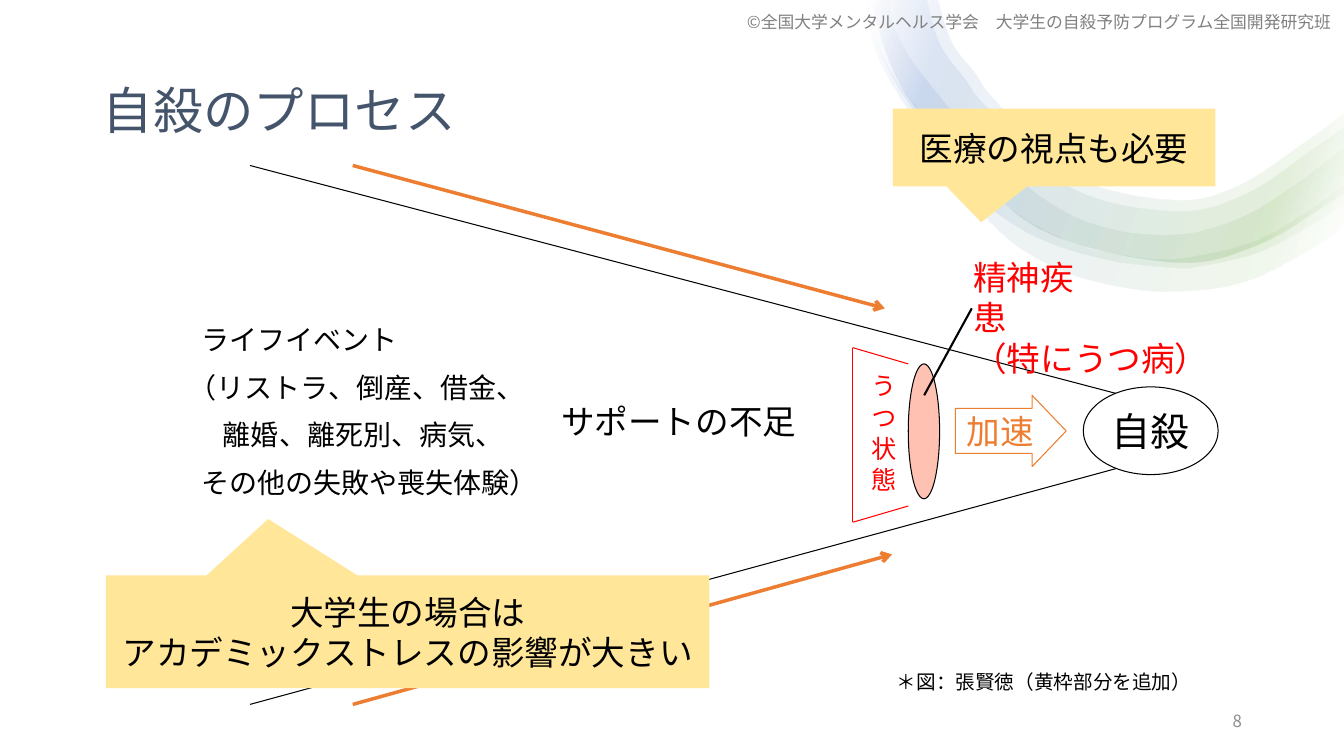
"""Build the slide on the process that leads to suicide."""
from lxml.etree import SubElement
from pptx import Presentation
from pptx.dml.color import RGBColor
from pptx.enum.shapes import MSO_CONNECTOR, MSO_SHAPE
from pptx.enum.text import MSO_ANCHOR, PP_ALIGN
from pptx.oxml import parse_xml
from pptx.oxml.ns import nsdecls, qn
from pptx.util import Cm, Pt

COLORS = {
    "black": "000000", "white": "FFFFFF", "red": "FF0000", "coral": "FF3300",
    "orange": "ED7D31", "yellow": "FFE699", "slate": "44546A", "gray": "808080",
    "pale": "8C8C8C", "green": "70AD47", "blue": "4472C4",
}
FONT = "Noto Sans CJK JP"
STOPS = [(2, "white"), (16, "green"), (85, "blue"), (100, "white")]

OUTER = [(21.97, 0), (22.58, 1.91), (23.72, 3.43), (26.16, 5.74), (29.57, 6.6),
         (31.7, 6.15), (33.5, 5.08), (33.87, 4.83)]
RIBBONS = [
    ([(21.84, 0), (21.92, 0.71), (22.12, 1.42), (22.45, 2.08), (22.83, 2.69),
      (23.44, 3.61), (24.05, 4.55), (24.51, 5.13), (25.63, 6.2), (27.05, 6.93),
      (28.63, 7.29), (29.62, 7.34), (30.78, 7.23), (31.83, 6.91), (33.22, 6.15),
      (33.87, 5.66)],
     [(21.95, 0), (22, 0.69), (22.4, 1.7), (23.01, 2.59), (23.95, 3.73),
      (24.92, 4.8), (26.04, 5.64), (27.33, 6.22), (28.7, 6.48), (29.79, 6.5),
      (31.47, 6.12), (32.72, 5.46), (33.87, 4.65)]),
    ([(21.97, 0), (22.1, 0.97), (22.5, 1.96), (23.27, 3.12), (24.05, 4.29),
      (24.89, 5.18), (26.19, 5.99), (27.89, 6.53), (29.57, 6.73), (30.15, 6.71),
      (31.67, 6.35), (33.02, 5.66), (33.87, 5.11)],
     [(22.43, 0), (22.48, 0.51), (22.89, 1.37), (23.47, 2.16), (24.38, 3.23),
      (25.3, 4.17), (26.29, 4.98), (27.43, 5.59), (28.73, 5.87), (30.05, 5.84),
      (31.27, 5.46), (32.39, 4.8), (33.87, 3.71)]),
    (OUTER,
     [(23.37, 0), (23.7, 1.12), (24.36, 2.03), (24.87, 2.69), (26.95, 4.7),
      (29.57, 5.31), (31.37, 4.88), (33.15, 3.68), (33.87, 3.18)]),
    (OUTER,
     [(23.65, 0), (24, 1.07), (24.59, 1.85), (25.1, 2.54), (27.03, 4.42),
      (29.57, 5.03), (31.22, 4.65), (32.99, 3.48), (33.87, 2.84)]),
]


def tint(name):
    """Return the named colour."""
    return RGBColor.from_string(COLORS[name])


def smooth(knots, steps=6):
    """Return points on a curve that passes through the knots."""
    ends = [knots[0], *knots, knots[-1]]
    curve = [knots[0]]
    for a, b, c, d in zip(ends, ends[1:], ends[2:], ends[3:]):
        for step in range(1, steps + 1):
            t = step / steps
            curve.append(tuple(
                (2 * q + (r - p) * t + (2 * p - 5 * q + 4 * r - s) * t ** 2
                 + (3 * q - p - 3 * r + s) * t ** 3) / 2
                for p, q, r, s in zip(a, b, c, d)))
    return curve


def ribbon(slide, outer, inner):
    """Draw a sheer ribbon between two curved edges."""
    edge = [(Cm(x), Cm(y)) for x, y in smooth(outer) + smooth(inner)[::-1]]
    pen = slide.shapes.build_freeform(*edge[0])
    pen.add_line_segments(edge[1:], close=True)
    shape = pen.convert_to_shape()
    shape.shadow.inherit = False
    shape.line.fill.background()
    stops = "".join(
        f'<a:gs pos="{place * 1000}"><a:srgbClr val="{COLORS[name]}">'
        '<a:alpha val="10000"/></a:srgbClr></a:gs>' for place, name in STOPS)
    blend = parse_xml(
        f'<a:gradFill {nsdecls("a")} rotWithShape="1"><a:gsLst>{stops}</a:gsLst>'
        '<a:lin ang="12000000" scaled="0"/></a:gradFill>')
    shape.element.spPr.find(qn("a:custGeom")).addnext(blend)


def write(shape, text, size=24, color="black", font=FONT, align=PP_ALIGN.LEFT,
          anchor=MSO_ANCHOR.TOP, wrap=True, before=0, leading=None, indents=()):
    """Put formatted text in a shape, one paragraph a line."""
    frame = shape.text_frame
    frame.word_wrap = wrap
    frame.vertical_anchor = anchor
    frame.text = text
    for index, para in enumerate(frame.paragraphs):
        para.alignment = align
        para.line_spacing = leading
        if index:
            para.space_before = Pt(before)
        if indents:
            para._p.get_or_add_pPr().set("marL", str(Cm(indents[index])))
        for run in para.runs:
            run.font.size = Pt(size)
            run.font.name = font
            run.font.color.rgb = tint(color)
            SubElement(run.font._element, qn("a:ea"), typeface=font)


def label(slide, box, text, **style):
    """Add a text box."""
    shape = slide.shapes.add_textbox(*map(Cm, box))
    write(shape, text, **style)
    return shape


def figure(slide, kind, box, fill, line=None, adjust=()):
    """Add a preset shape with a flat fill."""
    shape = slide.shapes.add_shape(kind, *map(Cm, box))
    shape.shadow.inherit = False
    for index, value in enumerate(adjust):
        shape.adjustments[index] = value
    shape.fill.solid()
    shape.fill.fore_color.rgb = tint(fill)
    if line:
        shape.line.color.rgb = tint(line)
        shape.line.width = Pt(0.75)
    else:
        shape.line.fill.background()
    return shape


def callout(slide, box, text, tip):
    """Add a yellow speech box."""
    shape = figure(slide, MSO_SHAPE.RECTANGULAR_CALLOUT, box, "yellow", adjust=tip)
    write(shape, text, align=PP_ALIGN.CENTER, anchor=MSO_ANCHOR.MIDDLE)


def rule(slide, start, end, color="black", width=0.75, arrow=False):
    """Draw a straight line, with an arrowhead if asked."""
    line = slide.shapes.add_connector(
        MSO_CONNECTOR.STRAIGHT, *map(Cm, (*start, *end)))
    line.line.color.rgb = tint(color)
    line.line.width = Pt(width)
    if arrow:
        SubElement(line.line._get_or_add_ln(), qn("a:tailEnd"), type="arrow")
    SubElement(line._element.spPr, qn("a:effectLst"))


def main():
    """Build and save the slide."""
    deck = Presentation()
    deck.slide_width, deck.slide_height = Cm(33.87), Cm(19.05)
    slide = deck.slides.add_slide(deck.slide_layouts[6])
    middle = {"anchor": MSO_ANCHOR.MIDDLE}
    center = {**middle, "align": PP_ALIGN.CENTER, "wrap": False}
    right = {**middle, "align": PP_ALIGN.RIGHT}

    for outer, inner in RIBBONS:
        ribbon(slide, outer, inner)
    label(slide, (15.47, 16.28, 14.81, 1.8), "＊図：張賢徳（黄枠部分を追加）",
          size=14, **right)
    callout(slide, (22.5, 2.74, 8.13, 1.96), "医療の視点も必要", (-0.226, 0.96))
    label(slide, (2.34, 1.02, 29.21, 3.68), "自殺のプロセス",
          size=36, color="slate", leading=0.9, **middle)
    label(slide, (13.89, 9.98, 6.81, 1.27), "サポートの不足")

    rule(slide, (6.3, 4.17), (28.3, 9.96))
    rule(slide, (6.3, 17.75), (28.3, 11.76))
    death = figure(slide, MSO_SHAPE.OVAL, (27.3, 9.75, 3.4, 2.21), "white", "black")
    write(death, "自殺", size=28, font="Arial", **center)
    illness = figure(slide, MSO_SHAPE.OVAL, (22.89, 9.17, 0.79, 3.4), "coral", "black")
    shade = illness.fill._xPr.find(qn("a:solidFill"))[0]
    SubElement(shade, qn("a:alpha"), val="30000")
    speed = figure(slide, MSO_SHAPE.RIGHT_ARROW, (24.08, 9.96, 2.79, 1.8),
                   "white", "orange", (0.632, 0.478))
    write(speed, "加速", color="orange", **center)

    top, bottom = (21.49, 8.76), (21.49, 13.16)
    rule(slide, top, (22.89, 9.17), "red")
    rule(slide, bottom, (22.89, 12.75), "red")
    rule(slide, top, bottom, "red")
    mood = label(slide, (21.49, 9.17, 1.27, 4.8), "う つ 状 態", size=18, color="red")
    mood.text_frame._txBody.bodyPr.set("vert", "eaVert")
    label(slide, (4.5, 8, 9.6, 4.95),
          "ライフイベント\n（リストラ、倒産、借金、\n離婚、離死別、病気、\nその他の失敗や喪失体験）",
          size=20, before=10, indents=(0.32, 0, 0.87, 0.32))

    rule(slide, (8.89, 4.17), (22.3, 7.77), "orange", 2.5, arrow=True)
    rule(slide, (8.89, 17.75), (22.48, 13.97), "orange", 2.5, arrow=True)
    rule(slide, (23.29, 9.96), (24.49, 7.77), width=1.5)
    label(slide, (24.28, 6.35, 6.91, 2.31), "精神疾\v患\v（特にうつ病）", color="red")
    callout(slide, (2.67, 14.5, 15.21, 2.84),
            "大学生の場合は\vアカデミックストレスの影響が大きい", (-0.231, -1))
    label(slide, (23.93, 17.65, 7.62, 1.02), "8", size=12, color="pale", **right)
    label(slide, (18.52, 0.03, 15.34, 1.02),
          "©全国大学メンタルヘルス学会　大学生の自殺予防プログラム全国開発研究班",
          size=12, color="gray", **center)
    deck.save("out.pptx")


if __name__ == "__main__":
    main()
